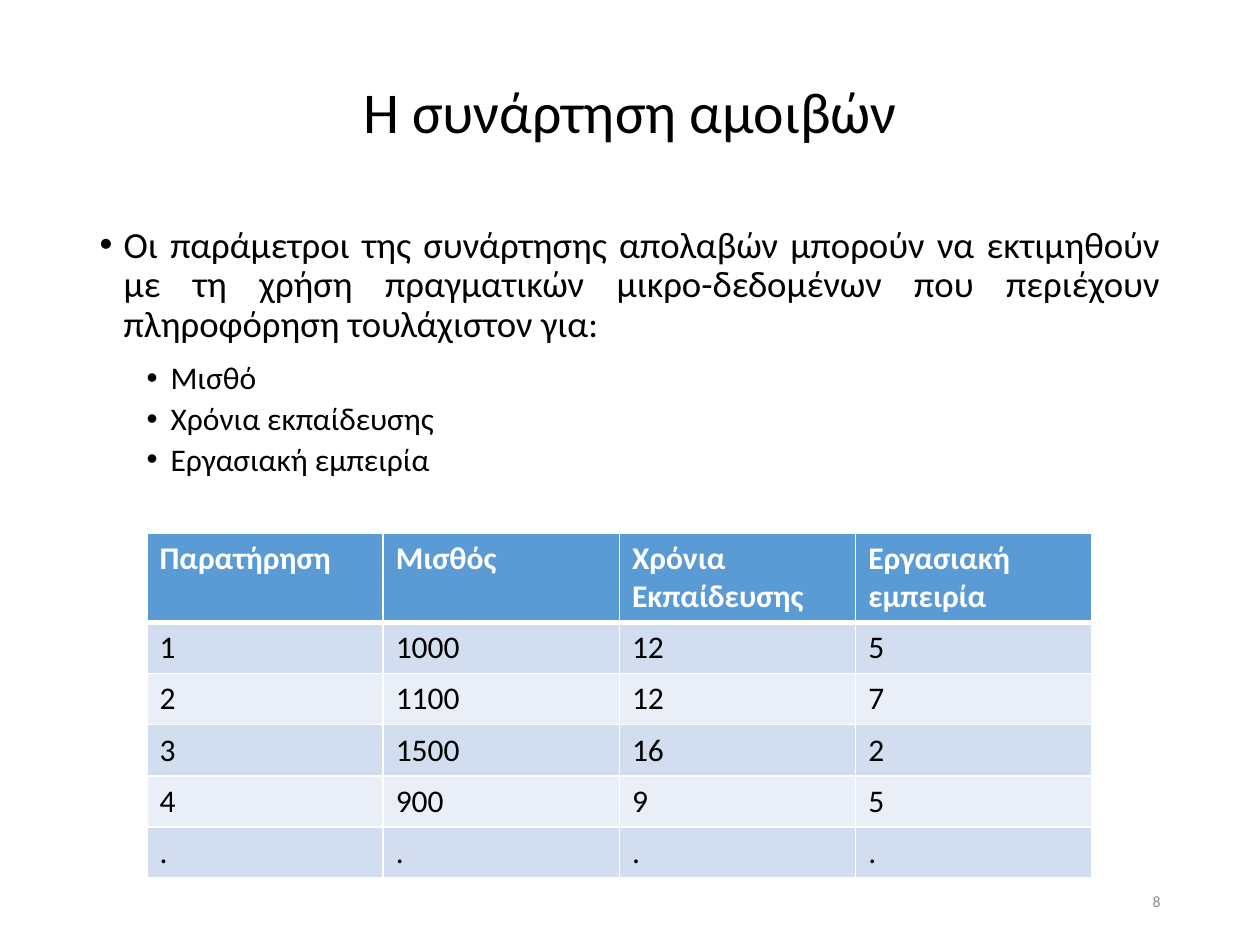
from lxml.etree import SubElement
from pptx import Presentation
from pptx.dml.color import RGBColor
from pptx.enum.text import MSO_ANCHOR, MSO_AUTO_SIZE, PP_ALIGN
from pptx.oxml import parse_xml
from pptx.oxml.ns import nsdecls, qn
from pptx.util import Inches, Pt

PIXELS_PER_INCH = 126
BLACK = RGBColor(0x00, 0x00, 0x00)
WHITE = RGBColor(0xFF, 0xFF, 0xFF)
GREY = RGBColor(0x8C, 0x8C, 0x8C)
HEADER_BLUE = RGBColor(0x5B, 0x9B, 0xD5)
BANDS = (RGBColor(0xD2, 0xDE, 0xEF), RGBColor(0xEA, 0xEF, 0xF7))

# Paragraph format and bullet indents (px) for each list level
LEVELS = (
    {"margin": 24, "size": 21, "space_before": 7.5, "space_after": 6},
    {"margin": 71, "size": 18, "space_before": 3.8, "space_after": 0},
)
HANGING = 24

BULLETS = (
    (0, "Οι παράμετροι της συνάρτησης απολαβών μπορούν να εκτιμηθούν με τη χρήση "
        "πραγματικών μικρο-δεδομένων που περιέχουν πληροφόρηση τουλάχιστον για:"),
    (1, "Μισθό"),
    (1, "Χρόνια εκπαίδευσης"),
    (1, "Εργασιακή εμπειρία"),
)
OBSERVATIONS = (
    ("Παρατήρηση", "Μισθός", "Χρόνια Εκπαίδευσης", "Εργασιακή εμπειρία"),
    ("1", "1000", "12", "5"),
    ("2", "1100", "12", "7"),
    ("3", "1500", "16", "2"),
    ("4", "900", "9", "5"),
    (".", ".", ".", "."),
)


def px(length):
    return round(length * Inches(1) / PIXELS_PER_INCH)


class SlideBuilder:
    font_name = "Calibri"

    def __init__(self, presentation):
        self.slide = presentation.slides.add_slide(presentation.slide_layouts[1])

    def place(self, shape, left, top, width, height):
        box = {"left": left, "top": top, "width": width, "height": height}
        for name, length in box.items():
            setattr(shape, name, px(length))

    def add_text(self, paragraph, text, size, color=BLACK, bold=False, **layout):
        for name, value in layout.items():
            setattr(paragraph, name, value)
        run = paragraph.add_run()
        run.text = text
        font_format = {"name": self.font_name, "size": Pt(size), "bold": bold}
        for name, value in font_format.items():
            setattr(run.font, name, value)
        run.font.color.rgb = color

    def frame(self, shape, anchor):
        text_frame = shape.text_frame
        settings = {"word_wrap": True, "auto_size": MSO_AUTO_SIZE.NONE,
                    "vertical_anchor": anchor}
        for name, value in settings.items():
            setattr(text_frame, name, value)
        return text_frame

    def title(self, text, *box):
        shape = self.slide.shapes.title
        self.place(shape, *box)
        paragraph = self.frame(shape, MSO_ANCHOR.MIDDLE).paragraphs[0]
        self.add_text(paragraph, text, 33, alignment=PP_ALIGN.CENTER, line_spacing=0.9)

    def bullet_list(self, items, *box):
        shape = self.slide.placeholders[1]
        self.place(shape, *box)
        text_frame = self.frame(shape, MSO_ANCHOR.TOP)
        for index, (level, text) in enumerate(items):
            style = LEVELS[level]
            paragraph = text_frame.add_paragraph() if index else text_frame.paragraphs[0]
            properties = paragraph._p.get_or_add_pPr()
            properties.set("marL", str(px(style["margin"])))
            properties.set("indent", str(-px(HANGING)))
            SubElement(properties, qn("a:buFont"), typeface="Arial")
            SubElement(properties, qn("a:buChar"), char="•")
            self.add_text(paragraph, text, style["size"], level=level,
                          alignment=PP_ALIGN.JUSTIFY, line_spacing=0.9,
                          space_before=Pt(style["space_before"] if index else 0),
                          space_after=Pt(style["space_after"]))

    def page_number(self, text, *box):
        shape = self.slide.shapes.add_textbox(*map(px, box))
        paragraph = self.frame(shape, MSO_ANCHOR.MIDDLE).paragraphs[0]
        self.add_text(paragraph, text, 9, GREY, alignment=PP_ALIGN.RIGHT)

    def borders(self, cell, widths):
        properties = cell._tc.get_or_add_tcPr()
        for index, (side, width) in enumerate(widths.items()):
            properties.insert(index, parse_xml(
                f'<a:ln{side} {nsdecls("a")} w="{Pt(width)}"><a:solidFill>'
                f'<a:srgbClr val="{WHITE}"/></a:solidFill></a:ln{side}>'))

    def table(self, rows, left, top, width, header_height, row_height):
        height = header_height + row_height * (len(rows) - 1)
        table = self.slide.shapes.add_table(
            len(rows), len(rows[0]), *map(px, (left, top, width, height))).table
        for row_index, values in enumerate(rows):
            header = row_index == 0
            table.rows[row_index].height = px(header_height if header else row_height)
            for column_index, value in enumerate(values):
                cell = table.cell(row_index, column_index)
                cell.fill.solid()
                cell.fill.fore_color.rgb = HEADER_BLUE if header else BANDS[(row_index - 1) % 2]
                self.borders(cell, {"L": 1, "R": 1, "T": 3 if row_index == 1 else 1,
                                    "B": 3 if header else 1})
                self.add_text(cell.text_frame.paragraphs[0], value, 18,
                              WHITE if header else BLACK, header)


def main():
    presentation = Presentation()
    presentation.slide_width = px(1260)
    presentation.slide_height = px(945)
    builder = SlideBuilder(presentation)

    # Title and list
    builder.title("Η συνάρτηση αμοιβών", 87, 50, 1086, 129)
    builder.bullet_list(BULLETS, 87, 220, 1086, 631)

    # Slide number and sample data
    builder.page_number("8", 890, 876, 283, 50)
    builder.table(OBSERVATIONS, 147, 533, 945, 89, 51)

    presentation.save("out.pptx")


if __name__ == "__main__":
    main()
